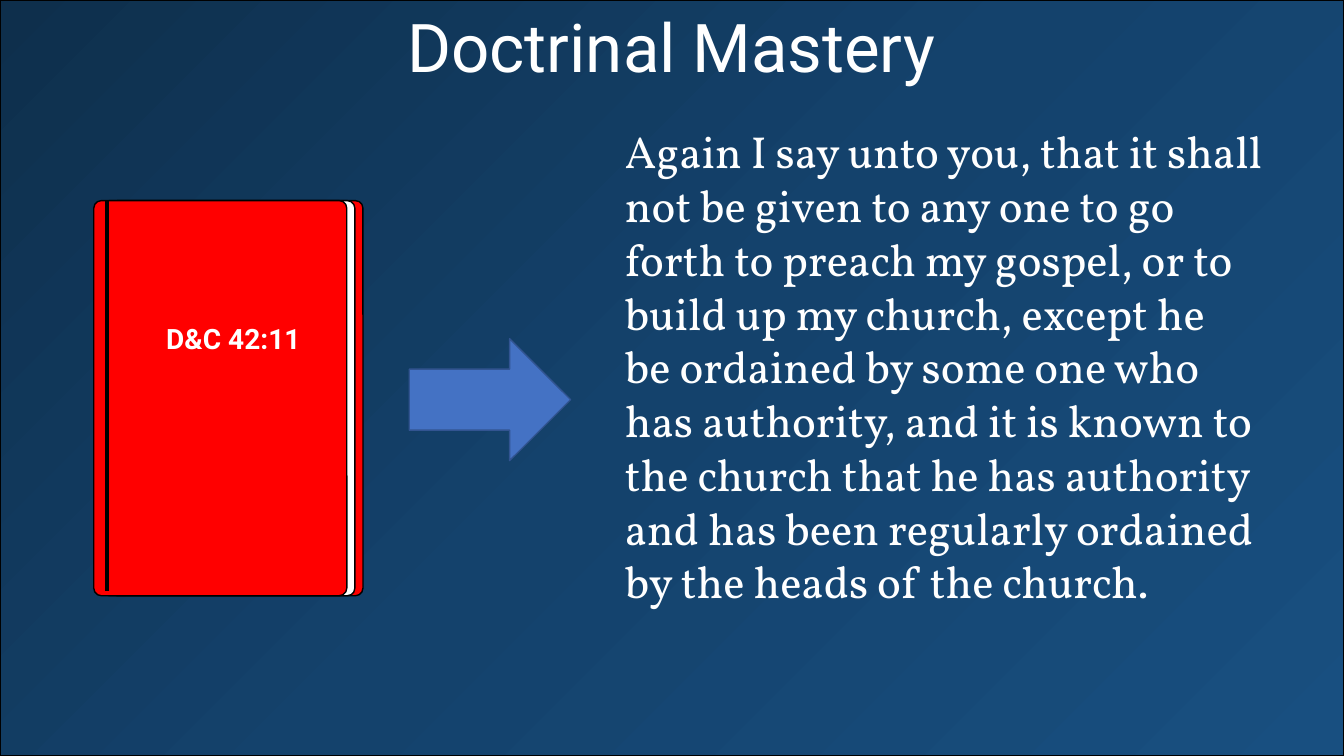
import pptx
import pptx.util
import pptx.dml.color
import pptx.enum.shapes
import pptx.enum.text
import pptx.oxml.ns
import copy
from lxml import etree

Inches = pptx.util.Inches
Shape = pptx.enum.shapes.MSO_SHAPE
Align = pptx.enum.text.PP_ALIGN

COLOURS = {
    "night": "0E2F4C",
    "dusk": "14426C",
    "sea": "184F80",
    "cover": "FF0000",
    "white": "FFFFFF",
    "black": "000000",
    "arrow": "4472C4",
    "arrow edge": "325491",
}
NO_BREAK_SPACE = chr(160)
PASSAGE = (
    "Again I say unto you, that it shall not be given to any one to go forth "
    "to~preach~my gospel, or to build up my church, except he "
    "be~ordained~by some one who has~authority, and it is known to "
    "the church that he has authority and has been regularly ordained "
    "by the heads of the church."
).replace("~", NO_BREAK_SPACE)


def colour(name):
    """Return the named colour as an RGB value."""
    return pptx.dml.color.RGBColor.from_string(COLOURS[name])


def add_block(page, kind, box, fill, edge="black"):
    """Add a flat outlined preset shape; box is in inches."""
    block = page.shapes.add_shape(kind, *map(Inches, box))
    block.shadow.inherit = False
    block.fill.solid()
    block.fill.fore_color.rgb = colour(fill)
    block.line.color.rgb = colour(edge)
    block.line.width = pptx.util.Pt(1)
    return block


def write(holder, text, size, font, align, bold=False):
    """Write one white paragraph into a text holder."""
    frame = holder.text_frame
    frame.word_wrap = True
    frame.auto_size = pptx.enum.text.MSO_AUTO_SIZE.NONE
    frame.vertical_anchor = pptx.enum.text.MSO_ANCHOR.TOP
    frame.text = text
    para = frame.paragraphs[0]
    para.alignment = align
    para.font.size = pptx.util.Pt(size)
    para.font.name = font
    para.font.bold = bold
    para.font.color.rgb = colour("white")


def add_text(page, box, *style, **options):
    """Add a text box holding one paragraph."""
    write(page.shapes.add_textbox(*map(Inches, box)), *style, **options)


def add_backdrop(page, box):
    """Add the diagonal blue gradient behind everything else."""
    backdrop = add_block(page, Shape.RECTANGLE, box, "night")
    backdrop.fill.gradient()
    backdrop.fill.gradient_angle = 315
    stops = backdrop.element.find(".//" + pptx.oxml.ns.qn("a:gsLst"))
    stops.insert(1, copy.deepcopy(stops[0]))
    names = ("night", "dusk", "sea")
    for index, (stop, name) in enumerate(zip(backdrop.fill.gradient_stops, names)):
        stop.position = index / 2
        stop.color.rgb = colour(name)
    page.shapes.title.element.addprevious(backdrop.element)


def add_title(page, box):
    """Place and fill the title placeholder."""
    title = page.shapes.title
    title.left, title.top, title.width, title.height = map(Inches, box)
    write(title, "Doctrinal Mastery", 48, "Roboto", Align.CENTER)


def add_book(page, box):
    """Draw the closed book: back cover, pages, front cover, label and spine."""
    left, top, width, height = box
    step = 0.08
    for layer, fill in enumerate(("cover", "white", "cover")):
        offset = (2 - layer) * step
        sheet = add_block(page, Shape.ROUNDED_RECTANGLE,
                          (left + offset, top, width - 2 * step, height), fill)
        sheet.adjustments[0] = 0.03
    add_text(page, (left - 0.36, top + 1.15, 3.49, 0.44),
             "D&C 42:11", 20, "Roboto", Align.CENTER, bold=True)
    spine = page.shapes.add_connector(
        pptx.enum.shapes.MSO_CONNECTOR.STRAIGHT,
        *map(Inches, (left + 0.13, top + height - 0.05, left + 0.13, top)))
    spine.line.color.rgb = colour("black")
    spine.line.width = pptx.util.Pt(3)
    etree.SubElement(spine.element.spPr, pptx.oxml.ns.qn("a:effectLst"))


def build_scripture_slide(deck):
    """Build the slide that leads from the book to its passage."""
    page = deck.slides.add_slide(deck.slide_layouts[5])
    add_backdrop(page, (0, 0, 13.33, 7.5))
    add_title(page, (1.66, 0, 10, 0.91))
    add_book(page, (0.93, 1.99, 2.67, 3.92))
    add_text(page, (6.1, 1.18, 6.67, 5.49), PASSAGE, 32, "Vollkorn", Align.LEFT)
    add_block(page, Shape.RIGHT_ARROW, (4.06, 3.36, 1.6, 1.21), "arrow", "arrow edge")


def main():
    """Create and save the deck."""
    deck = pptx.Presentation()
    deck.slide_width, deck.slide_height = Inches(13.33), Inches(7.5)
    build_scripture_slide(deck)
    deck.save("out.pptx")


if __name__ == "__main__":
    main()
